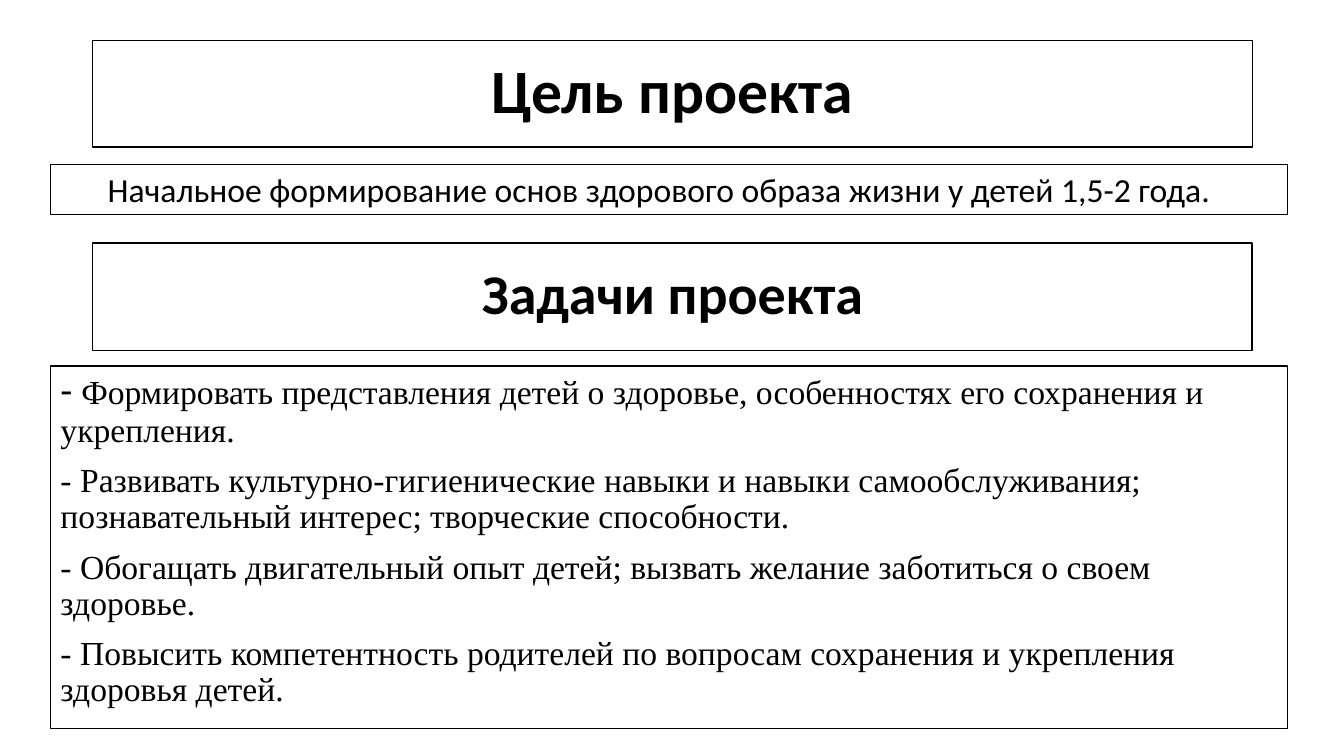
"""Build the slide that states the goal and the tasks of the project."""
from dataclasses import dataclass
from typing import Optional

from pptx import Presentation
from pptx import util as u
from pptx.dml.color import RGBColor
from pptx.enum import shapes, text
from pptx.oxml.xmlchemy import OxmlElement

BLACK, WHITE = "000000", "FFFFFF"
SANS, SERIF = "Calibri", "Times New Roman"


@dataclass
class Run:
    text: str
    size: float
    name: str = SANS
    bold: bool = False


@dataclass
class Panel:
    left: float
    top: float
    width: float
    height: float
    paragraphs: list[list[Run]]
    align: text.PP_ALIGN = text.PP_ALIGN.LEFT
    anchor: text.MSO_ANCHOR = text.MSO_ANCHOR.TOP
    autosize: text.MSO_AUTO_SIZE = text.MSO_AUTO_SIZE.NONE
    spacing: float = 0.9
    before: float = 0
    indent: float = 0
    placeholder: Optional[int] = None


def color(value: str) -> RGBColor:
    return RGBColor.from_string(value)


def heading(top: float, height: float, label: str, size: float,
            placeholder: Optional[int] = None) -> Panel:
    return Panel(0.92, top, 11.5, height, [[Run(label, size, bold=True)]],
                 align=text.PP_ALIGN.CENTER, anchor=text.MSO_ANCHOR.MIDDLE,
                 placeholder=placeholder)


def fill_text(tf, panel: Panel) -> None:
    for i, runs in enumerate(panel.paragraphs):
        p = tf.add_paragraph() if i else tf.paragraphs[0]
        pPr = p._p.get_or_add_pPr()
        pPr.set("marL", "0")
        pPr.set("indent", str(u.Inches(panel.indent)))
        pPr.append(OxmlElement("a:buNone"))
        formats = {"alignment": panel.align, "line_spacing": panel.spacing,
                   "space_before": u.Pt(panel.before if i else 0)}
        for key, value in formats.items():
            setattr(p, key, value)
        for item in runs:
            r = p.add_run()
            r.text = item.text
            font = {"size": u.Pt(item.size), "name": item.name, "bold": item.bold}
            for key, value in font.items():
                setattr(r.font, key, value)
            r.font.color.rgb = color(BLACK)


def draw(s, panel: Panel) -> None:
    box = [u.Inches(v) for v in (panel.left, panel.top, panel.width, panel.height)]
    if panel.placeholder is None:
        sp = s.shapes.add_shape(shapes.MSO_SHAPE.RECTANGLE, *box)
        sp.shadow.inherit = False
    else:
        sp = s.placeholders[panel.placeholder]
        for key, value in zip(("left", "top", "width", "height"), box):
            setattr(sp, key, value)
    sp.fill.solid()
    sp.fill.fore_color.rgb = color(WHITE)
    sp.line.color.rgb = color(BLACK)
    sp.line.width = u.Pt(1)
    tf = sp.text_frame
    frame = {"word_wrap": True, "auto_size": panel.autosize,
             "vertical_anchor": panel.anchor}
    for key, value in frame.items():
        setattr(tf, key, value)
    fill_text(tf, panel)


TASKS = [
    "Формировать представления детей о здоровье, особенностях его сохранения и укрепления.",
    "- Развивать культурно-гигиенические навыки и навыки самообслуживания; "
    "познавательный интерес; творческие способности.",
    "- Обогащать двигательный опыт детей; вызвать желание заботиться о своем здоровье.",
    "- Повысить компетентность родителей по вопросам сохранения и укрепления здоровья детей.",
]
GOAL = "Начальное формирование основ здорового образа жизни у детей 1,5-2 года."


def main() -> None:
    prs = Presentation()
    prs.slide_width, prs.slide_height = u.Inches(13.33), u.Inches(7.5)
    s = prs.slides.add_slide(prs.slide_layouts[1])
    tasks = [[Run(task, 24, SERIF)] for task in TASKS]
    tasks[0].insert(0, Run("- ", 28))
    panels = [
        heading(0.4, 1.06, "Цель проекта", 44, placeholder=0),
        Panel(0.5, 3.63, 12.27, 3.6, tasks, before=10, placeholder=1),
        Panel(0.5, 1.63, 12.27, 0.5, [[Run(GOAL, 24)]],
              align=text.PP_ALIGN.JUSTIFY, spacing=1, indent=0.47,
              autosize=text.MSO_AUTO_SIZE.SHAPE_TO_FIT_TEXT),
        heading(2.41, 1.07, "Задачи проекта", 40),
    ]
    for panel in panels:
        draw(s, panel)
    prs.save("out.pptx")


if __name__ == "__main__":
    main()
